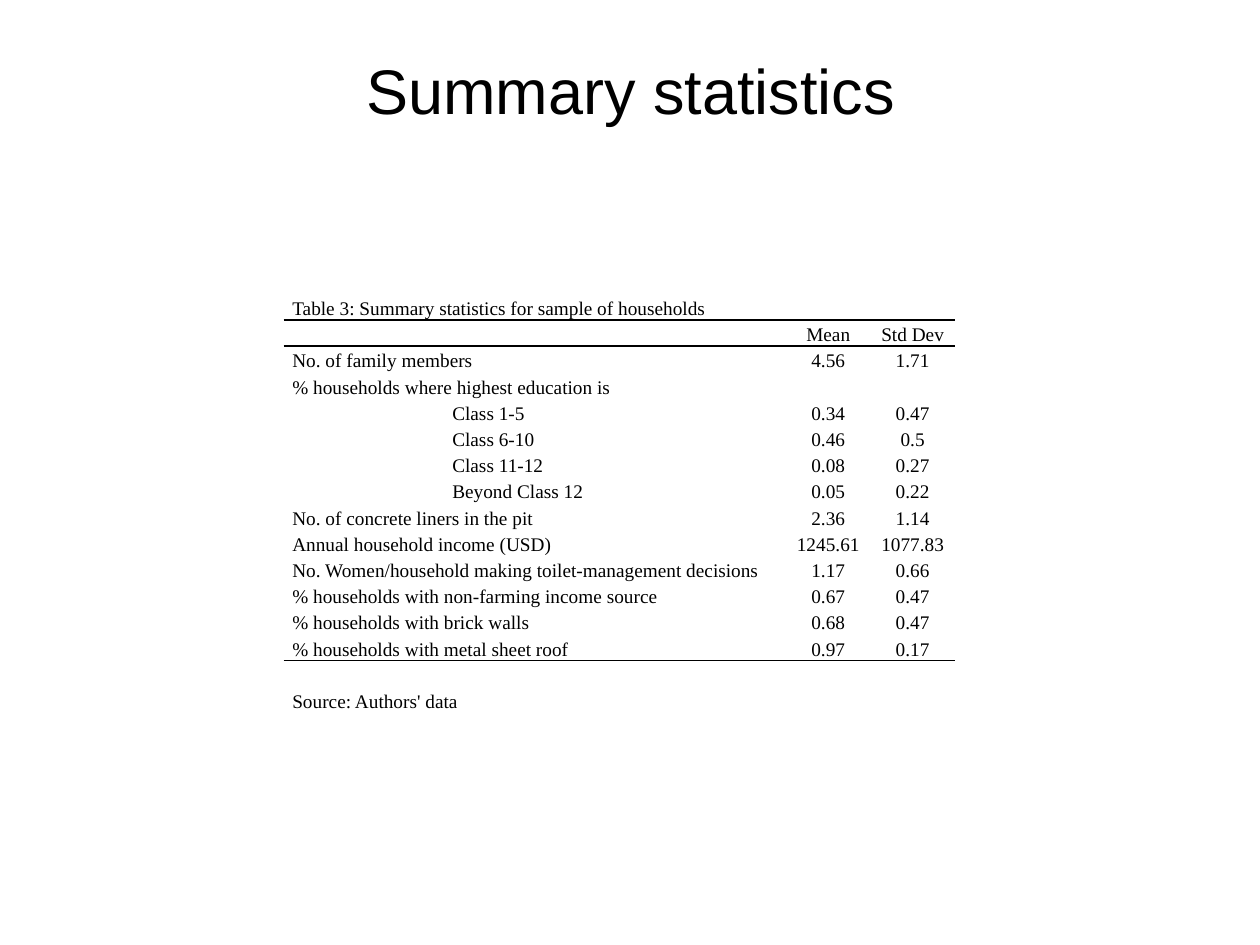
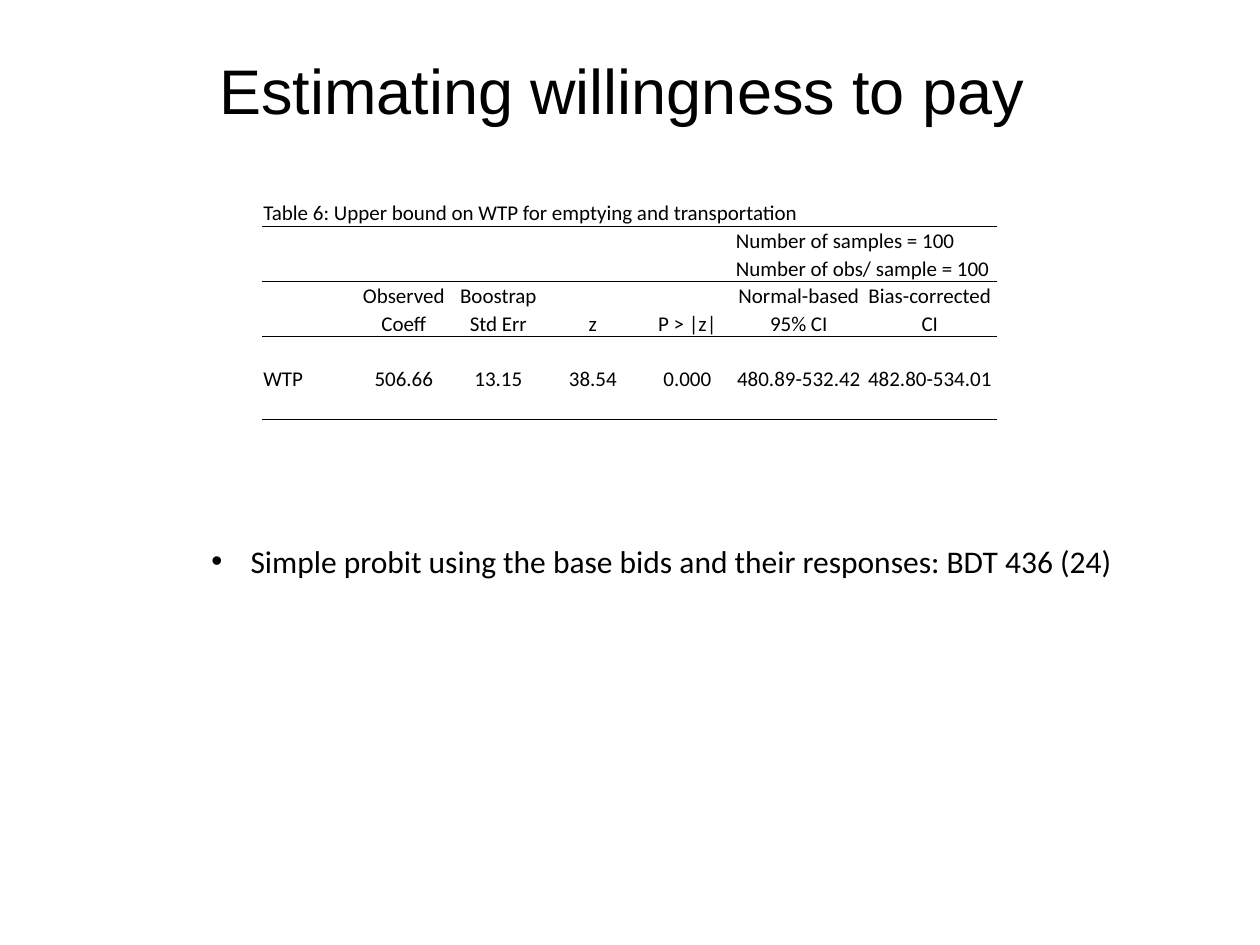
from pptx import Presentation
from pptx.dml.color import RGBColor
from pptx.enum.text import MSO_ANCHOR, PP_ALIGN
from pptx.oxml.ns import qn
from pptx.util import Inches, Pt
from lxml.etree import SubElement

BLACK = "000000"
WHITE = "FFFFFF"
NO_STYLE_NO_GRID = "{2D5ABB26-0587-4C30-8999-92F81FD0307C}"


def color(value):
    return RGBColor.from_string(value)


def write(para, text, font="Calibri", size=12, align=PP_ALIGN.LEFT, spacing=None):
    para.alignment = align
    if spacing:
        para.line_spacing = spacing
    if not text:
        SubElement(para._p, qn("a:endParaRPr"), sz=str(size * 100))
        return
    span = para.add_run()
    span.text = text
    span.font.name = font
    span.font.size = Pt(size)
    span.font.color.rgb = color(BLACK)


def rule_below(cell, width):
    line = SubElement(cell._tc.get_or_add_tcPr(), qn("a:lnB"), w=str(Pt(width)))
    fill = SubElement(line, qn("a:solidFill"))
    SubElement(fill, qn("a:srgbClr"), val=BLACK)


class Deck:
    def __init__(self):
        self.deck = Presentation()
        self.deck.slide_width = Inches(10)
        self.deck.slide_height = Inches(7.5)
        self.page = None

    def text_box(self, left, top, width, height):
        box = self.page.shapes.add_textbox(
            Inches(left), Inches(top), Inches(width), Inches(height))
        box.text_frame.word_wrap = True
        return box

    def new_page(self, title):
        self.page = self.deck.slides.add_slide(self.deck.slide_layouts[6])
        box = self.text_box(0.17, 0.33, 9.67, 0.75)
        box.fill.solid()
        box.fill.fore_color.rgb = color(WHITE)
        box.text_frame.vertical_anchor = MSO_ANCHOR.MIDDLE
        write(box.text_frame.paragraphs[0], title, font="Arial", size=36,
              align=PP_ALIGN.CENTER)

    def table(self, left, top, height, widths, rows, spans, rules, rule_width,
              side_margin, top_margin, left_cells, **style):
        shape = self.page.shapes.add_table(
            len(rows), len(widths), Inches(left), Inches(top),
            Inches(sum(widths)), Inches(height))
        table = shape.table
        table.first_row = table.horz_banding = False
        table._tbl.tblPr.find(qn("a:tableStyleId")).text = NO_STYLE_NO_GRID
        for column, width in zip(table.columns, widths):
            column.width = Inches(width)
        for r, row in enumerate(rows):
            table.rows[r].height = Inches(height / len(rows))
            for c in range(len(widths)):
                cell = table.cell(r, c)
                cell.margin_left = cell.margin_right = Inches(side_margin)
                cell.margin_top = Inches(top_margin)
                cell.margin_bottom = 0
                cell.vertical_anchor = MSO_ANCHOR.BOTTOM
                if r in rules:
                    rule_below(cell, rule_width)
                cell.fill.background()
                at_left = c in left_cells or (r, c) in spans
                write(cell.text_frame.paragraphs[0], row.get(c, ""),
                      align=PP_ALIGN.LEFT if at_left else PP_ALIGN.CENTER, **style)
        for (r, c), count in spans.items():
            table.cell(r, c).merge(table.cell(r, c + count - 1))

    def bullet(self, text, left, top, width, height, **style):
        box = self.text_box(left, top, width, height)
        para = box.text_frame.paragraphs[0]
        properties = para._p.get_or_add_pPr()
        properties.set("marL", str(Inches(0.31)))
        properties.set("indent", str(-Inches(0.31)))
        SubElement(properties, qn("a:buFont"), typeface="Arial")
        SubElement(properties, qn("a:buChar"), char="•")
        write(para, text, **style)


def summary_page(deck):
    deck.new_page("Summary statistics")
    statistics = [
        ("Table 3: Summary statistics for sample of households", 0, 6, "", ""),
        ("", 0, 1, "Mean", "Std Dev"),
        ("No. of family members", 0, 3, "4.56", "1.71"),
        ("% households where highest education is", 0, 5, "", ""),
        ("Class 1-5", 1, 1, "0.34", "0.47"),
        ("Class 6-10", 1, 2, "0.46", "0.5"),
        ("Class 11-12", 1, 2, "0.08", "0.27"),
        ("Beyond Class 12", 1, 2, "0.05", "0.22"),
        ("No. of concrete liners in the pit", 0, 4, "2.36", "1.14"),
        ("Annual household income (USD)", 0, 4, "1245.61", "1077.83"),
        ("No. Women/household making toilet-management decisions", 0, 6,
         "1.17", "0.66"),
        ("% households with non-farming income source", 0, 5, "0.67", "0.47"),
        ("% households with brick walls", 0, 3, "0.68", "0.47"),
        ("% households with metal sheet roof", 0, 4, "0.97", "0.17"),
        ("", 0, 1, "", ""),
        ("Source: Authors' data", 0, 3, "", ""),
    ]
    rows = [{column: label, 6: mean, 7: deviation}
            for label, column, _, mean, deviation in statistics]
    spans = {(r, column): count
             for r, (_, column, count, _, _) in enumerate(statistics) if count > 1}
    deck.table(2.25, 2.33, 3.33, [1.27, 1.96] + [0.19] * 4 + [0.67] * 2,
               rows, spans, rules=(0, 1, 13), rule_width=1, side_margin=0.07,
               top_margin=0, left_cells=(0, 1), font="Times New Roman", size=11,
               spacing=1.07)


def willingness_page(deck):
    deck.new_page("Estimating willingness to pay ")
    grid = [
        ["Table 6: Upper bound on WTP for emptying and transportation"],
        [""] * 5 + ["Number of samples = 100"],
        [""] * 5 + ["Number of obs/ sample = 100"],
        ["", "Observed", "Boostrap", "", "", "Normal-based", "Bias-corrected"],
        ["", "Coeff", "Std Err", "z", "P > |z|", "95% CI", "CI"],
        [],
        ["WTP", "506.66", "13.15", "38.54", "0.000", "480.89-532.42",
         "482.80-534.01"],
        [],
    ]
    rows = [dict(enumerate(row)) for row in grid]
    deck.table(2.08, 1.58, 1.75, [0.75] * 5 + [1.02, 1.06], rows,
               {(0, 0): 6, (1, 5): 2, (2, 5): 2}, rules=(0, 2, 4, 7),
               rule_width=0.5, side_margin=0.01, top_margin=0.01, left_cells=(0,),
               size=12)
    deck.bullet("Simple probit using the base bids and their responses: BDT 436 (24)",
                1.58, 4.25, 7.75, 0.4, size=18)


def main():
    deck = Deck()
    summary_page(deck)
    willingness_page(deck)
    deck.deck.save("out.pptx")


if __name__ == "__main__":
    main()
